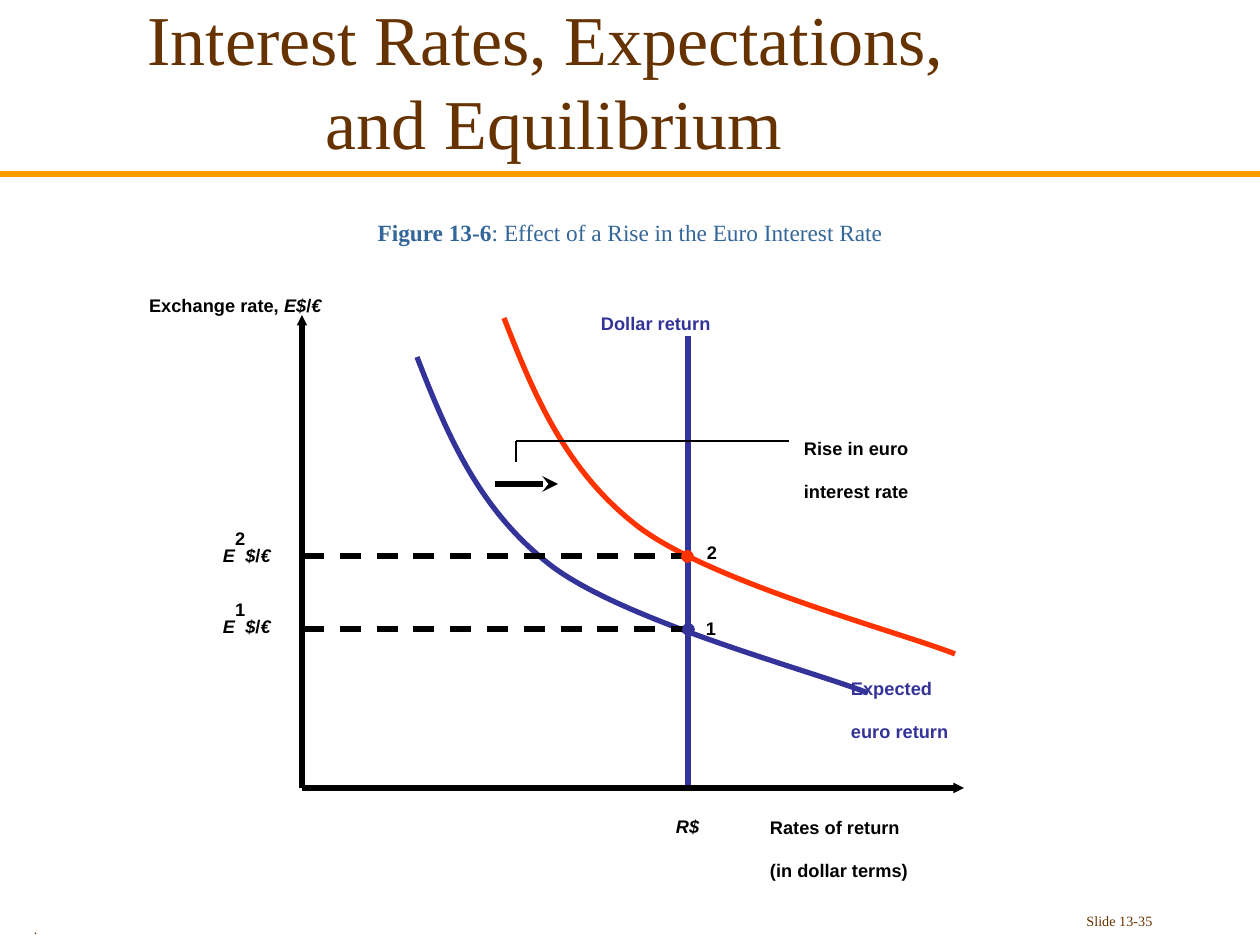
from lxml.etree import SubElement
from pptx import Presentation
from pptx.dml.color import RGBColor
from pptx.enum.dml import MSO_LINE
from pptx.enum.shapes import MSO_CONNECTOR, MSO_SHAPE
from pptx.enum.text import MSO_ANCHOR, PP_ALIGN
from pptx.oxml.ns import qn
from pptx.util import Pt

PX = 914400 // 126
BROWN = RGBColor(0x66, 0x33, 0x00)
ORANGE = RGBColor(0xFF, 0x99, 0x00)
STEEL = RGBColor(0x33, 0x66, 0x99)
BLUE = RGBColor(0x33, 0x33, 0x99)
RED = RGBColor(0xFF, 0x33, 0x00)
BLACK = RGBColor(0, 0, 0)
SERIF, SANS = "Times New Roman", "Arial"
LOWERED, RAISED = -25000, 30000

deck = Presentation()
deck.slide_width, deck.slide_height = 1260 * PX, 945 * PX
page = deck.slides.add_slide(deck.slide_layouts[6])


def add_text(frame, paragraphs, size=18, color=BLACK, font=SANS,
             align=PP_ALIGN.LEFT, anchor=MSO_ANCHOR.TOP, left_inset=13, top_inset=6):
    """Add a box; each paragraph is a list of (text, style letters), b, i, ^ raised."""
    box = page.shapes.add_textbox(*(value * PX for value in frame))
    text_frame = box.text_frame
    text_frame.word_wrap = True
    text_frame.vertical_anchor = anchor
    text_frame.margin_left, text_frame.margin_top = left_inset * PX, top_inset * PX
    for index, spans in enumerate(paragraphs):
        para = text_frame.add_paragraph() if index else text_frame.paragraphs[0]
        para.alignment = align
        for text, style in spans:
            span = para.add_run()
            span.text = text
            span.font.name, span.font.size = font, Pt(size)
            span.font.color.rgb = color
            span.font.bold, span.font.italic = "b" in style, "i" in style
            baseline = RAISED if "^" in style else LOWERED
            span.font._element.set("baseline", str(baseline))


def add_line(start, end, color=BLACK, width=3, dashed=False, head=None, tail=None, arrow_size="sm"):
    line = page.shapes.add_connector(
        MSO_CONNECTOR.STRAIGHT, *(value * PX for value in (*start, *end)))
    line.line.color.rgb = color
    line.line.width = Pt(width)
    if dashed:
        line.line.dash_style = MSO_LINE.DASH
    for tag, kind in (("a:headEnd", head), ("a:tailEnd", tail)):
        if kind:
            SubElement(line.line._get_or_add_ln(), qn(tag), type=kind, w=arrow_size, len=arrow_size)
    SubElement(line._element.spPr, qn("a:effectLst"))


# Title rule and footer
add_line((0, 174), (1260, 174), ORANGE)
add_text((903, 861, 262, 63), [[("Slide 13-35", "")]], 14, BROWN, SERIF,
         PP_ALIGN.RIGHT, top_inset=35)
add_text((21, 861, 473, 63), [[(".", "")]], 14, BROWN, SERIF, top_inset=43)

# Dollar return
add_line((688, 336), (688, 788), BLUE)
add_text((588, 285, 214, 50), [[("Dollar return", "b")]], color=BLUE)
add_text((663, 788, 95, 50), [[("R$", "bi")]])

# Expected euro return before and after the rise
curve_steps = [(30, 77), (62, 154), (136, 210), (212, 266), (399, 315), (451, 336)]
for left, top, color in ((504, 318, RED), (417, 357, BLUE)):
    builder = page.shapes.build_freeform(left, top, scale=PX)
    builder.add_line_segments([(left + x, top + y) for x, y in curve_steps], close=False)
    curve = builder.convert_to_shape()
    curve.shadow.inherit = False
    curve.fill.background()
    curve.line.color.rgb = color
    curve.line.width = Pt(3)
    # Each three points become the controls and end of one cubic segment
    outline = next(curve._element.iter(qn("a:path")))
    segments = outline.findall(qn("a:lnTo"))
    for first in range(0, len(segments), 3):
        bezier = SubElement(outline, qn("a:cubicBezTo"))
        for segment in segments[first:first + 3]:
            bezier.append(segment[0])
            outline.remove(segment)

# Figure caption and axes
add_text((0, 189, 1260, 63),
         [[("Figure 13-6", "b"), (": Effect of a Rise in the Euro Interest Rate", "")]],
         23, STEEL, SERIF, PP_ALIGN.CENTER, MSO_ANCHOR.BOTTOM)
add_text((757, 789, 263, 88), [[("Rates of return", "b")], [("(in dollar terms)", "b")]])
add_line((302, 315), (302, 788), head="triangle")
add_line((302, 788), (964, 788), tail="triangle")
add_text((136, 267, 325, 50),
         [[("Exchange rate, ", "b"), ("E$", "bi"), ("/", "b"), ("€", "bi")]])

# Equilibrium points: number, level, dot centre, number box, rate label top
equilibria = (
    ("1", 629, 688, BLUE, (693, 590), 588),
    ("2", 556, 687, RED, (694, 514), 517),
)
for number, level, center, color, number_corner, rate_top in equilibria:
    add_line((303, level), (center, level), dashed=True)
    dot = page.shapes.add_shape(
        MSO_SHAPE.OVAL, (center - 5) * PX, (level - 5) * PX, 11 * PX, 11 * PX)
    dot.shadow.inherit = False
    dot.fill.solid()
    dot.fill.fore_color.rgb = color
    dot.line.color.rgb = color
    dot.line.width = Pt(1)
    add_text((*number_corner, 43, 50), [[(number, "b")]])
    add_text((210, rate_top, 149, 50),
             [[("E", "bi"), (number, "b^"), ("$", "bi"), ("/", "b"), ("€", "bi")]])

# Shift of the curve
add_line((516, 462), (516, 441), width=1)
add_line((516, 441), (789, 441), width=1)
add_line((495, 484), (558, 484), tail="stealth", arrow_size="med")
add_text((791, 410, 214, 88), [[("Rise in euro", "b")], [("interest rate", "b")]])
add_text((788, 650, 290, 126), [[("Expected", "b")], [("euro return", "b")]],
         color=BLUE, left_inset=63)

# Title
title = page.shapes.add_textbox(10 * PX, 0, 1071 * PX, 158 * PX)
title.text_frame.word_wrap = True
title.text_frame.vertical_anchor = MSO_ANCHOR.MIDDLE
heading = title.text_frame.paragraphs[0]
heading.text = "Interest Rates, Expectations,\v and Equilibrium"
heading.alignment = PP_ALIGN.CENTER
for span in heading.runs:
    span.font.name, span.font.size = SERIF, Pt(40)
    span.font.color.rgb = BROWN

deck.save("out.pptx")
